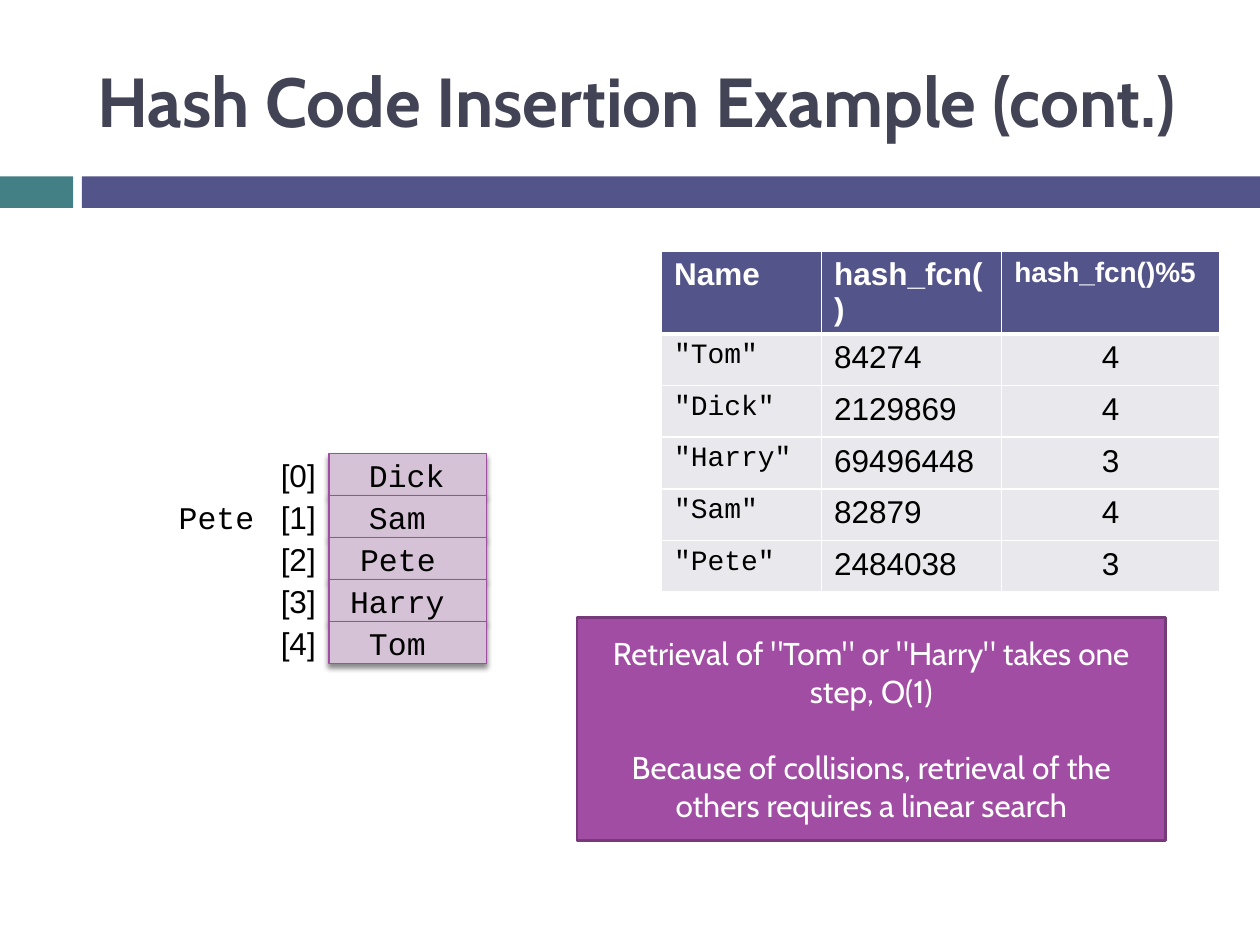
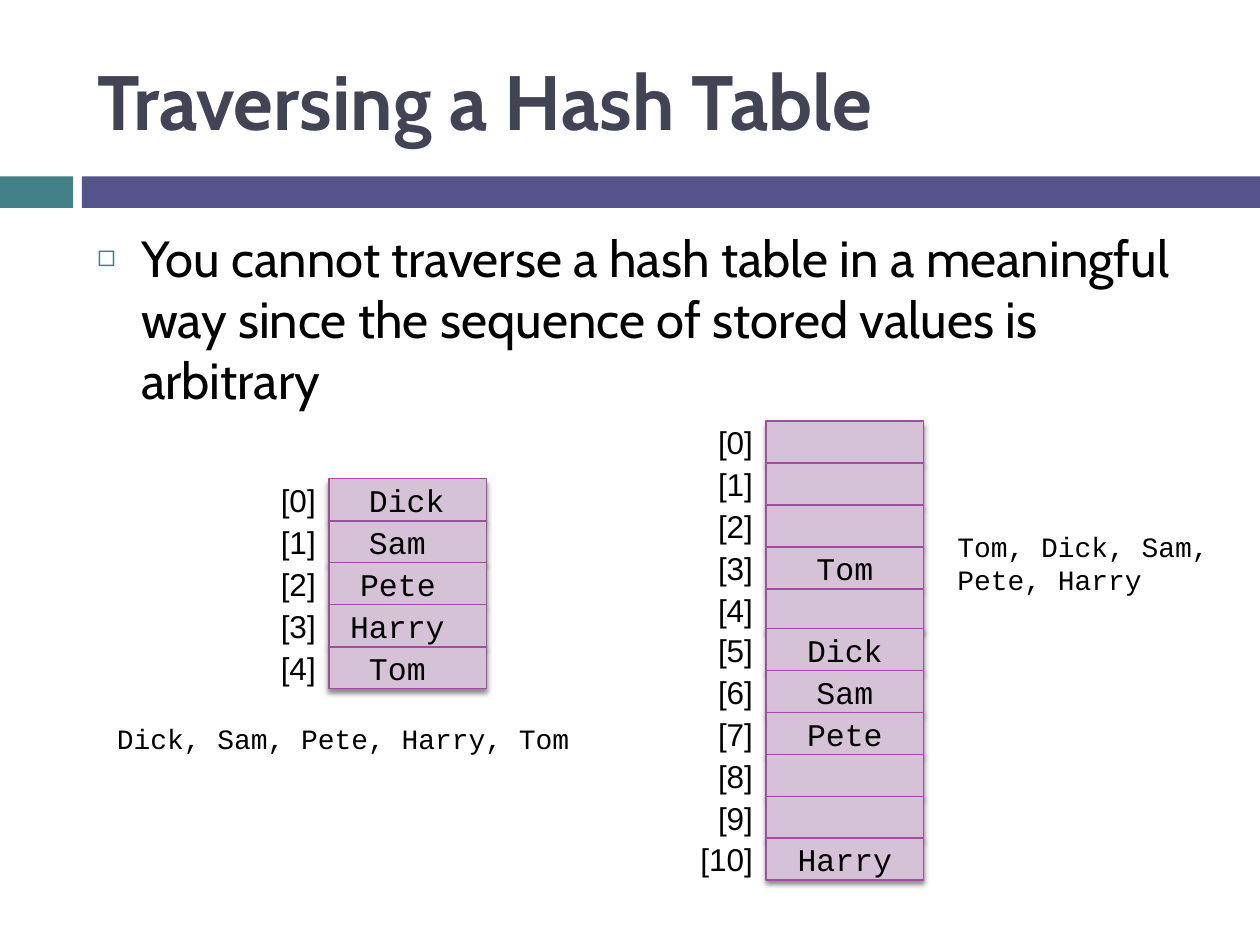
from lxml import etree
from pptx import Presentation
from pptx.dml.color import RGBColor
from pptx.enum.shapes import MSO_SHAPE
from pptx.enum.text import MSO_ANCHOR, MSO_AUTO_SIZE, PP_ALIGN
from pptx.oxml import parse_xml
from pptx.oxml.ns import nsdecls, qn
from pptx.util import Inches, Pt

RECT = MSO_SHAPE.RECTANGLE
LEFT, CENTER = PP_ALIGN.LEFT, PP_ALIGN.CENTER
MIDDLE = MSO_ANCHOR.MIDDLE
GROW, FIXED = MSO_AUTO_SIZE.SHAPE_TO_FIT_TEXT, MSO_AUTO_SIZE.NONE

COLORS = {
    "teal": "438086", "indigo": "53548A", "title": "424456",
    "slot": "D6C2D7", "purple": "A04DA3", "edge": "763979",
    "row": "E9E9ED", "white": "FFFFFF", "black": "000000",
}
SANS, HEAD, MONO = "Arial", "Cabin", "Courier New"
SLOT_W, SLOT_H = 1.25, 1 / 3
NAMES = [("Dick", 0.22), ("Sam", 0.22), ("Pete", 0.15), ("Harry", 0.07), ("Tom", 0.22)]
HASHES = [
    ("Name", "hash_fcn()", "hash_fcn()%5"),
    ('"Tom"', "84274", "4"),
    ('"Dick"', "2129869", "4"),
    ('"Harry"', "69496448", "3"),
    ('"Sam"', "82879", "4"),
    ('"Pete"', "2484038", "3"),
]


def rgb(name):
    return RGBColor.from_string(COLORS[name])


def style(para, font, size, color="black", bold=False, align=LEFT):
    para.alignment = align
    for run in para.runs:
        run.font.name, run.font.size, run.font.bold = font, Pt(size), bold
        run.font.color.rgb = rgb(color)


def place(shape, left, top, width, height):
    shape.left, shape.top = Inches(left), Inches(top)
    shape.width, shape.height = Inches(width), Inches(height)


def shade(shape):
    """Add a soft shadow straight below the shape."""
    effects = shape._element.spPr.find(qn("a:effectLst"))
    effects.append(parse_xml(
        f'<a:outerShdw {nsdecls("a")} blurRad="{Pt(3)}" dist="{Pt(2.4)}" dir="5400000" '
        f'rotWithShape="0"><a:srgbClr val="{COLORS["black"]}"><a:alpha val="45000"/>'
        '</a:srgbClr></a:outerShdw>'))


def border(cell, below):
    """Give the cell white edges, the lower one as wide as given."""
    props = cell._tc.get_or_add_tcPr()
    for spot, (side, width) in enumerate(zip("LRTB", (1, 1, 1, below))):
        props.insert(spot, parse_xml(
            f'<a:ln{side} {nsdecls("a")} w="{Pt(width)}"><a:solidFill>'
            f'<a:srgbClr val="{COLORS["white"]}"/></a:solidFill></a:ln{side}>'))


class Deck:
    def __init__(self):
        self.file = Presentation()
        self.file.slide_width, self.file.slide_height = Inches(10), Inches(7.5)
        self.slide = None

    def start(self, title, size, layout):
        self.slide = self.file.slides.add_slide(self.file.slide_layouts[layout])
        self.box(0, 1.4, 0.58, 0.25, "teal")
        self.box(0.65, 1.4, 9.35, 0.25, "indigo")
        head = self.slide.shapes.title
        place(head, 0.67, 0.25, 8.92, 1.08)
        frame = head.text_frame
        frame.text = title
        frame.auto_size, frame.vertical_anchor = FIXED, MIDDLE
        style(frame.paragraphs[0], HEAD, size, "title", True)

    def box(self, left, top, width, height, fill, line=None, weight=0.79, host=None):
        shapes = (host or self.slide).shapes
        shape = shapes.add_shape(RECT, Inches(left), Inches(top), Inches(width), Inches(height))
        shape.shadow.inherit = False
        shape.fill.solid()
        shape.fill.fore_color.rgb = rgb(fill)
        if line:
            shape.line.color.rgb = rgb(line)
            shape.line.width = Pt(weight)
        else:
            shape.line.fill.background()
        return shape

    def text(self, text, left, top, width, height=0.4, font=MONO, size=18, host=None):
        shapes = (host or self.slide).shapes
        frame = shapes.add_textbox(
            Inches(left), Inches(top), Inches(width), Inches(height)).text_frame
        frame.word_wrap, frame.auto_size = False, GROW
        frame.paragraphs[0].text = text
        style(frame.paragraphs[0], font, size)

    def name(self, text, left, top):
        self.text(text, left, top, 0.2 + 0.15 * len(text))

    def slots(self, left, top, values, first=0):
        """Stack shadowed slots with their index labels to the left."""
        group = self.slide.shapes.add_group_shape()
        for row, value in enumerate(values):
            y = top + row * SLOT_H
            slot = self.box(left, y, SLOT_W, SLOT_H, "slot", "purple", host=group)
            shade(slot)
            if value:
                slot.text_frame.text = value
                slot.text_frame.vertical_anchor = MIDDLE
                style(slot.text_frame.paragraphs[0], MONO, 18, align=CENTER)
        for row in range(len(values)):
            label = f"[{first + row}]"
            width = 0.06 + 0.14 * len(label)
            self.text(label, left - width, top + row * SLOT_H - 0.03, width,
                      font=SANS, host=group)

    def names(self, top):
        """Draw the five-slot table with a loose name over each slot."""
        left = 2.61
        self.slots(left, top, [""] * len(NAMES))
        for row, (name, shift) in enumerate(NAMES):
            self.name(name, left + shift, top + row * SLOT_H - 0.03)

    def table(self, rows, left, top, widths, heights):
        grid = self.slide.shapes.add_table(
            len(rows), len(widths), Inches(left), Inches(top),
            Inches(sum(widths)), Inches(sum(heights))).table
        for col, width in zip(grid.columns, widths):
            col.width = Inches(width)
        for r, values in enumerate(rows):
            grid.rows[r].height = Inches(heights[r])
            for c, value in enumerate(values):
                cell, head = grid.cell(r, c), r == 0
                cell.text = value
                cell.fill.solid()
                cell.fill.fore_color.rgb = rgb("indigo" if head else "row")
                border(cell, 3 if head else 1)
                para = cell.text_frame.paragraphs[0]
                if head:
                    style(para, SANS, 16 if c == 2 else 18, "white", True)
                elif c == 0:
                    style(para, MONO, 16)
                else:
                    style(para, SANS, 18, align=CENTER if c == 2 else LEFT)

    def note(self, lines, left, top, width, height):
        frame = self.box(left, top, width, height, "purple", "edge", 1.5).text_frame
        frame.text = "\n".join(lines)
        frame.word_wrap, frame.vertical_anchor = True, MIDDLE
        for para in frame.paragraphs:
            style(para, HEAD, 18, "white", align=CENTER)
        for para in frame.paragraphs[1:]:
            para.space_before = Pt(22)

    def bullet(self, text):
        body = self.slide.placeholders[1]
        place(body, 0.67, 1.75, 8.92, 4.92)
        body.text_frame.text = text
        body.text_frame.auto_size = FIXED
        para = body.text_frame.paragraphs[0]
        style(para, HEAD, 29)
        para.space_before = Pt(7)
        props = para._p.get_or_add_pPr()
        props.set("marL", str(Inches(0.35)))
        props.set("indent", str(Inches(-0.35)))
        color = etree.SubElement(props, qn("a:buClr"))
        etree.SubElement(color, qn("a:srgbClr"), val=COLORS["teal"])
        etree.SubElement(props, qn("a:buSzPct"), val="60000")
        etree.SubElement(props, qn("a:buChar"), char="◻")


def main():
    deck = Deck()

    deck.start("Hash Code Insertion Example (cont.)", 39.6, 5)
    deck.table(HASHES, 5.25, 1.99, [1.27, 1.43, 1.73], [0.31] + [0.41] * 5)
    deck.names(3.6)
    deck.name("Pete", 1.32, 3.9)
    deck.note([
        'Retrieval of "Tom" or "Harry" takes one step, O(1)',
        "Because of collisions, retrieval of the others requires a linear search",
    ], 4.58, 4.9, 4.67, 1.77)

    deck.start("Traversing a Hash Table", 44, 1)
    deck.bullet("You cannot traverse a hash table in a meaningful way "
                "since the sequence of stored values is arbitrary")
    deck.slots(6.08, 3.34, ["", "", "", "Tom", ""])
    deck.slots(6.08, 4.99, ["Dick", "Sam", "Pete", "", ""], 5)
    deck.slots(6.08, 6.65, ["Harry"], 10)
    deck.names(3.8)
    deck.text("Dick, Sam, Pete, Harry, Tom", 0.83, 5.68, 3.85, 0.37, size=16)
    deck.text("Tom, Dick, Sam, \nPete, Harry", 7.5, 4.15, 2.36, 0.64, size=16)

    deck.file.save("out.pptx")


if __name__ == "__main__":
    main()
